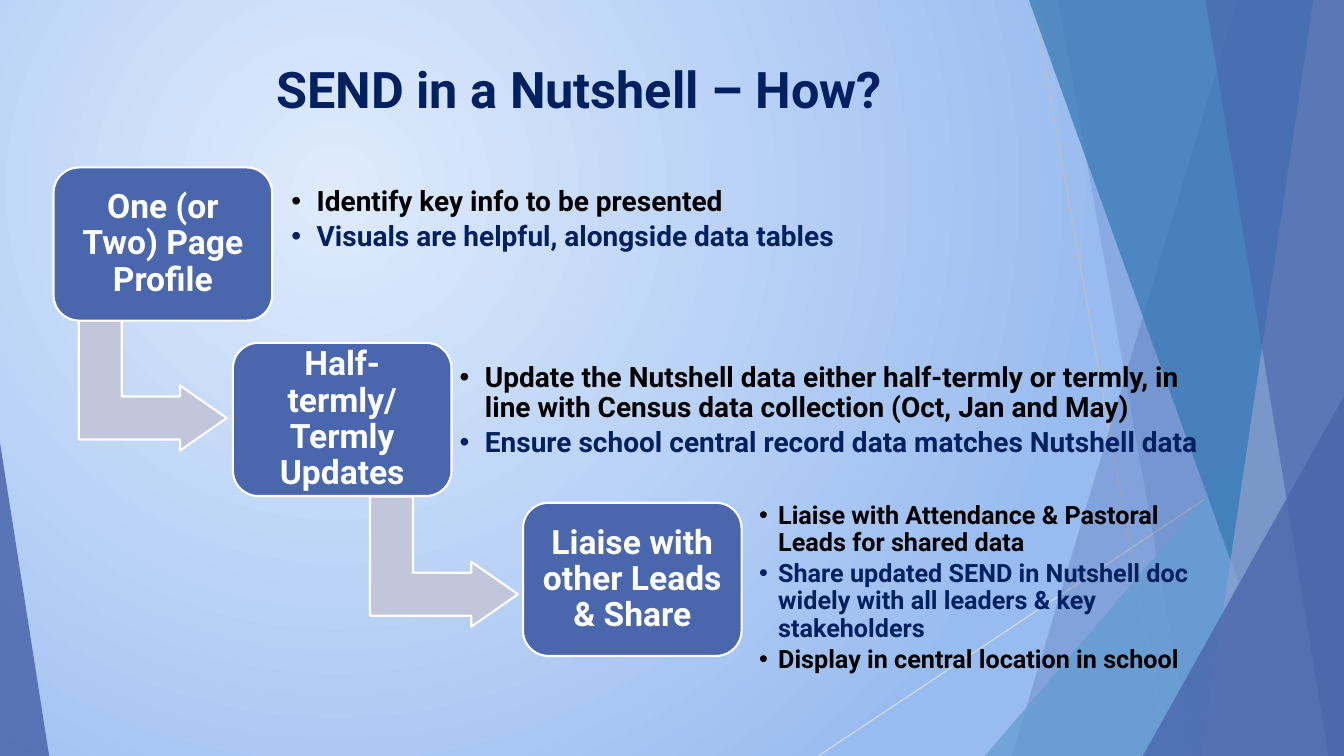
import dataclasses

import lxml.etree
import pptx
import pptx.dml.color
import pptx.enum.shapes
import pptx.enum.text
import pptx.oxml.ns
import pptx.shapes.autoshape
import pptx.shapes.base
import pptx.slide
import pptx.text.text
import pptx.util

Cm = pptx.util.Cm
Pt = pptx.util.Pt
qn = pptx.oxml.ns.qn
Shape = pptx.enum.shapes.MSO_SHAPE
Align = pptx.enum.text.PP_ALIGN
Anchor = pptx.enum.text.MSO_ANCHOR


@dataclasses.dataclass(frozen=True)
class Theme:
    font: str = "Roboto"
    navy: str = "002060"
    black: str = "000000"
    white: str = "FFFFFF"
    blue: str = "4A66AC"
    pale: str = "90A2CF"
    sky: str = "629DD1"
    teal: str = "3477B2"
    arrow: str = "C1C6DB"
    glow: tuple[str, str] = ("DFEBFD", "99BCF0")
    title: int = 36
    label: int = 24
    list: int = 20
    small: int = 18


@dataclasses.dataclass(frozen=True)
class Area:
    left: float
    top: float
    width: float
    height: float


@dataclasses.dataclass(frozen=True)
class Panel:
    """Band from a slanted left edge to the right side of the slide."""
    top: float
    foot: float
    color: str
    alpha: int


@dataclasses.dataclass(frozen=True)
class Wedge:
    """Triangle that stands on the bottom of the slide."""
    left: float
    width: float
    height: float
    tip: int
    color: str
    alpha: int


@dataclasses.dataclass(frozen=True)
class Ray:
    start: tuple[float, float]
    end: tuple[float, float]
    color: str


@dataclasses.dataclass(frozen=True)
class Step:
    label: str
    left: float
    top: float
    area: Area
    items: tuple[str, ...]
    size: int
    indent: float
    inset: float
    arrow: tuple[float, float] | None = None


THEME = Theme()
WIDE, HIGH = 33.87, 19.05
BOX = (5.51, 3.86)
ARROW = (3.28, 3.73)

RAYS = (
    Ray((26.04, 0), (29.41, HIGH), "BFBFBF"),
    Ray((WIDE, 10.24), (20.62, HIGH), "D9D9D9"),
)
FACETS = (
    Panel(31.19, 25.5, THEME.blue, 30),
    Panel(26.67, 30.05, THEME.blue, 20),
    Wedge(24.82, 9.05, 10.59, 1, THEME.sky, 72),
    Panel(25.93, 32.79, THEME.teal, 70),
    Panel(33.1, 30.28, THEME.pale, 70),
    Panel(30.38, 33.48, THEME.blue, 65),
    Wedge(28.8, 5.07, 9.07, 1, THEME.blue, 80),
    Wedge(0, 1.24, 7.9, 0, THEME.blue, 85),
)
STEPS = (
    Step("One (or Two) Page Profile", 1.35, 4.22, Area(7.14, 4.42, 15.27, 2.24),
         ("Identify key info to be presented",
          "Visuals are helpful, alongside data tables"),
         THEME.list, 0.64, 0.2, (2.21, 7.85)),
    Step("Half-termly/ Termly Updates", 5.87, 8.64, Area(11.38, 8.79, 19.74, 3.12),
         ("Update the Nutshell data either half-termly or termly, "
          "in line with Census data collection (Oct, Jan and May)",
          "Ensure school central record data matches Nutshell data"),
         THEME.list, 0.64, 0.2, (9.55, 12.29)),
    Step("Liaise with other Leads & Share", 13.18, 12.67, Area(18.95, 13.26, 12.19, 3.12),
         ("Liaise with Attendance & Pastoral Leads for shared data",
          "Share updated SEND in Nutshell doc widely with all leaders & key stakeholders",
          "Display in central location in school"),
         THEME.small, 0.48, 0.18),
)


def rgb(code: str) -> pptx.dml.color.RGBColor:
    return pptx.dml.color.RGBColor.from_string(code)


def paint(shape: pptx.shapes.autoshape.Shape, color: str,
          alpha: int = 100, edge: str | None = None) -> None:
    shape.shadow.inherit = False
    shape.fill.solid()
    shape.fill.fore_color.rgb = rgb(color)
    if alpha < 100:
        tone = shape.element.spPr.find(qn("a:solidFill")).find(qn("a:srgbClr"))
        lxml.etree.SubElement(tone, qn("a:alpha"), val=str(alpha * 1000))
    if edge:
        shape.line.color.rgb = rgb(edge)
        shape.line.width = Pt(1.5)
    else:
        shape.line.fill.background()


def place(shape: pptx.shapes.base.BaseShape, area: Area) -> None:
    shape.left, shape.top = Cm(area.left), Cm(area.top)
    shape.width, shape.height = Cm(area.width), Cm(area.height)


def setup(frame: pptx.text.text.TextFrame, text: str, anchor: Anchor,
          side: float, edge: float) -> None:
    frame.text = text
    frame.word_wrap = True
    frame.auto_size = pptx.enum.text.MSO_AUTO_SIZE.NONE
    frame.vertical_anchor = anchor
    frame.margin_left = frame.margin_right = Cm(side)
    frame.margin_top = frame.margin_bottom = Cm(edge)


def style(para: pptx.text.text._Paragraph, size: int, color: str,
          align: Align, after: float) -> None:
    para.alignment = align
    para.line_spacing = 0.9
    para.space_before, para.space_after = Pt(0), Pt(after)
    for run in para.runs:
        run.font.name, run.font.size = THEME.font, Pt(size)
        run.font.bold = True
        run.font.color.rgb = rgb(color)


def backdrop(slide: pptx.slide.Slide) -> None:
    fill = slide.background.fill
    fill.gradient()
    for stop, color in zip(fill.gradient_stops, THEME.glow):
        stop.color.rgb = rgb(color)
    line = slide.element.find(".//" + qn("a:lin"))
    ring = lxml.etree.Element(qn("a:path"), path="circle")
    lxml.etree.SubElement(ring, qn("a:fillToRect"), l="50000", t="50000",
                          r="100000", b="100000")
    line.getparent().replace(line, ring)


def draw_ray(slide: pptx.slide.Slide, ray: Ray) -> None:
    line = slide.shapes.add_connector(pptx.enum.shapes.MSO_CONNECTOR.STRAIGHT,
                                      *map(Cm, ray.start + ray.end))
    line.line.color.rgb = rgb(ray.color)
    line.line.width = Pt(0.75)
    lxml.etree.SubElement(line.element.spPr, qn("a:effectLst"))


def draw_facet(slide: pptx.slide.Slide, facet: Panel | Wedge) -> None:
    if isinstance(facet, Panel):
        path = slide.shapes.build_freeform(Cm(facet.top), 0)
        path.add_line_segments([(Cm(WIDE), 0), (Cm(WIDE), Cm(HIGH)),
                                (Cm(facet.foot), Cm(HIGH))])
        shape = path.convert_to_shape()
    else:
        shape = slide.shapes.add_shape(
            Shape.ISOSCELES_TRIANGLE, Cm(facet.left), Cm(HIGH - facet.height),
            Cm(facet.width), Cm(facet.height))
        shape.adjustments[0] = facet.tip
    paint(shape, facet.color, facet.alpha)


def draw_step(slide: pptx.slide.Slide, step: Step,
              body: pptx.shapes.base.BaseShape) -> None:
    # Arrow to the next step
    if step.arrow:
        arrow = slide.shapes.add_shape(Shape.BENT_UP_ARROW, *map(Cm, step.arrow + ARROW))
        arrow.rotation = 90
        for spot, value in enumerate((0.33, 0.25, 0.36)):
            arrow.adjustments[spot] = value
        paint(arrow, THEME.arrow, edge=THEME.white)
    # Labelled box
    box = slide.shapes.add_shape(Shape.ROUNDED_RECTANGLE,
                                 *map(Cm, (step.left, step.top) + BOX))
    paint(box, THEME.blue, edge=THEME.white)
    setup(box.text_frame, step.label, Anchor.MIDDLE, 0.27, 0.25)
    style(box.text_frame.paragraphs[0], THEME.label, THEME.white, Align.CENTER, 0)
    # Bullet list, in front of the backdrop
    body.element.getparent().append(body.element)
    place(body, step.area)
    setup(body.text_frame, "\n".join(step.items), Anchor.MIDDLE, step.inset, step.inset)
    for spot, para in enumerate(body.text_frame.paragraphs):
        style(para, step.size, (THEME.black, THEME.navy)[spot % 2], Align.LEFT, 3)
        props = para._p.get_or_add_pPr()
        props.set("marL", str(Cm(step.indent)))
        props.set("indent", str(-Cm(step.indent)))
        lxml.etree.SubElement(props, qn("a:buChar"), char="•")


def main() -> None:
    deck = pptx.Presentation()
    deck.slide_width, deck.slide_height = Cm(WIDE), Cm(HIGH)
    slide = deck.slides.add_slide(deck.slide_layouts.get_by_name("Comparison"))
    title, *bodies = slide.placeholders
    # Backdrop
    backdrop(slide)
    for ray in RAYS:
        draw_ray(slide, ray)
    for facet in FACETS:
        draw_facet(slide, facet)
    # Title
    place(title, Area(6.78, 1.32, 15.7, 1.8))
    setup(title.text_frame, "SEND in a Nutshell – How?", Anchor.BOTTOM, 0.18, 0.1)
    style(title.text_frame.paragraphs[0], THEME.title, THEME.navy, Align.LEFT, 4.2)
    # Steps
    for step, body in zip(STEPS, bodies):
        draw_step(slide, step, body)
    for spare in bodies[len(STEPS):]:
        spare.element.getparent().remove(spare.element)
    deck.save("out.pptx")


if __name__ == "__main__":
    main()
